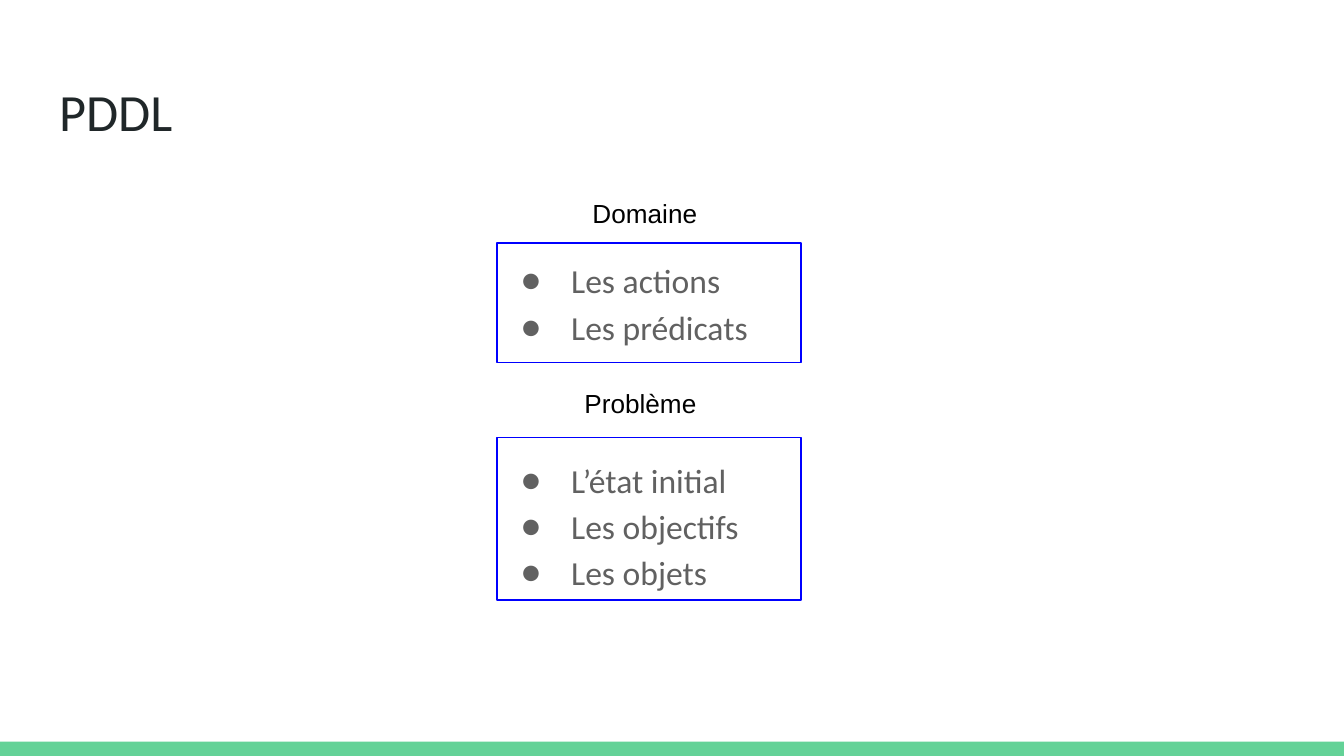
from dataclasses import dataclass

from lxml import etree
from pptx import Presentation
from pptx.dml.color import RGBColor
from pptx.enum.shapes import MSO_SHAPE
from pptx.enum.text import MSO_ANCHOR, MSO_AUTO_SIZE, PP_ALIGN
from pptx.oxml.ns import qn
from pptx.util import Pt

RECTANGLE = MSO_SHAPE.RECTANGLE
TOP = MSO_ANCHOR.TOP
NO_AUTOFIT = MSO_AUTO_SIZE.NONE
LEFT = PP_ALIGN.LEFT


@dataclass(frozen=True)
class Theme:
    """Colours, fonts and type sizes of the slide."""

    title_color: str = "202729"
    body_color: str = "616161"
    label_color: str = "000000"
    outline_color: str = "0000FF"
    footer_color: str = "63D297"
    text_font: str = "Calibri"
    label_font: str = "Arial"
    title_size: float = 28
    body_size: float = 18
    label_size: float = 14
    outline_width: float = 0.75
    inset: float = 7.2


def set_attributes(target, values):
    """Set each named value on the target."""
    for name, value in values.items():
        setattr(target, name, value)


class SlideBuilder:
    """Hold the style and the current slide."""

    def __init__(self, slide, theme):
        """Keep the slide and its theme."""
        self.slide = slide
        self.theme = theme

    def place(self, shape, left, top, width, height):
        """Move and size a shape in points."""
        set_attributes(shape, {"left": Pt(left), "top": Pt(top), "width": Pt(width), "height": Pt(height)})

    def frame(self, shape, top_inset=None):
        """Format and return the text frame of a shape."""
        inset = Pt(self.theme.inset)
        set_attributes(shape.text_frame, {
            "word_wrap": True,
            "auto_size": NO_AUTOFIT,
            "vertical_anchor": TOP,
            "margin_left": inset,
            "margin_right": inset,
            "margin_bottom": inset,
            "margin_top": Pt(top_inset or self.theme.inset),
        })
        return shape.text_frame

    def styled_run(self, paragraph, text, font, size, color):
        """Put one formatted run in a paragraph."""
        paragraph.alignment = LEFT
        run = paragraph.add_run()
        run.text = text
        set_attributes(run.font, {"name": font, "size": Pt(size)})
        run.font.color.rgb = RGBColor.from_string(color)

    def title(self, text, *bounds):
        """Fill the title placeholder."""
        theme = self.theme
        shape = self.slide.shapes.title
        self.place(shape, *bounds)
        paragraph = self.frame(shape).paragraphs[0]
        self.styled_run(paragraph, text, theme.text_font, theme.title_size, theme.title_color)

    def bullet(self, paragraph):
        """Give a paragraph a hanging round bullet."""
        properties = paragraph._p.get_or_add_pPr()
        properties.set("marL", str(Pt(36)))
        properties.set("indent", str(Pt(-27)))
        color = etree.SubElement(properties, qn("a:buClr"))
        etree.SubElement(color, qn("a:srgbClr"), val=self.theme.body_color)
        etree.SubElement(properties, qn("a:buFont"), typeface=self.theme.text_font)
        etree.SubElement(properties, qn("a:buChar"), char="●")

    def bullet_groups(self, groups, top_inset, group_gap, *bounds):
        """Fill the body placeholder with spaced groups of bullets."""
        theme = self.theme
        shape = self.slide.placeholders[1]
        self.place(shape, *bounds)
        text_frame = self.frame(shape, top_inset)
        paragraph = text_frame.paragraphs[0]
        for group_index, group in enumerate(groups):
            for item_index, item in enumerate(group):
                if group_index or item_index:
                    paragraph = text_frame.add_paragraph()
                is_last = item_index == len(group) - 1
                set_attributes(paragraph, {
                    "line_spacing": 1.15,
                    "space_before": Pt(0),
                    "space_after": Pt(group_gap if is_last else 0),
                })
                self.bullet(paragraph)
                self.styled_run(paragraph, item, theme.text_font, theme.body_size, theme.body_color)

    def rectangle(self, *bounds, fill=None, outline=None):
        """Draw a rectangle with an optional fill and outline."""
        shape = self.slide.shapes.add_shape(RECTANGLE, *map(Pt, bounds))
        shape.shadow.inherit = False
        if fill:
            shape.fill.solid()
            shape.fill.fore_color.rgb = RGBColor.from_string(fill)
        else:
            shape.fill.background()
        if outline:
            shape.line.color.rgb = RGBColor.from_string(outline)
            shape.line.width = Pt(self.theme.outline_width)
        else:
            shape.line.fill.background()

    def label(self, text, *bounds):
        """Add a text box with one line."""
        theme = self.theme
        shape = self.slide.shapes.add_textbox(*map(Pt, bounds))
        paragraph = self.frame(shape).paragraphs[0]
        self.styled_run(paragraph, text, theme.label_font, theme.label_size, theme.label_color)


def main():
    """Build and save the slide."""
    presentation = Presentation()
    set_attributes(presentation, {"slide_width": Pt(720), "slide_height": Pt(405)})
    theme = Theme()
    slide = presentation.slides.add_slide(presentation.slide_layouts[1])
    builder = SlideBuilder(slide, theme)

    builder.rectangle(0, 397.4, 720, 7.6, fill=theme.footer_color)
    builder.title("PDDL", 24.5, 35.3, 671, 45.4)
    groups = [
        ["Les actions", "Les prédicats"],
        ["L’état initial", "Les objectifs", "Les objets"],
    ]
    builder.bullet_groups(groups, 48.4, 57.2, 262.8, 87.8, 187.9, 269.3)
    for top, height in [(130.3, 64), (234.4, 87.2)]:
        builder.rectangle(266.2, top, 163, height, outline=theme.outline_color)
    for text, left, top in [("Domaine", 310.3, 98.6), ("Problème", 306, 200.2)]:
        builder.label(text, left, top, 83.5, 28.8)

    presentation.save("out.pptx")


if __name__ == "__main__":
    main()
